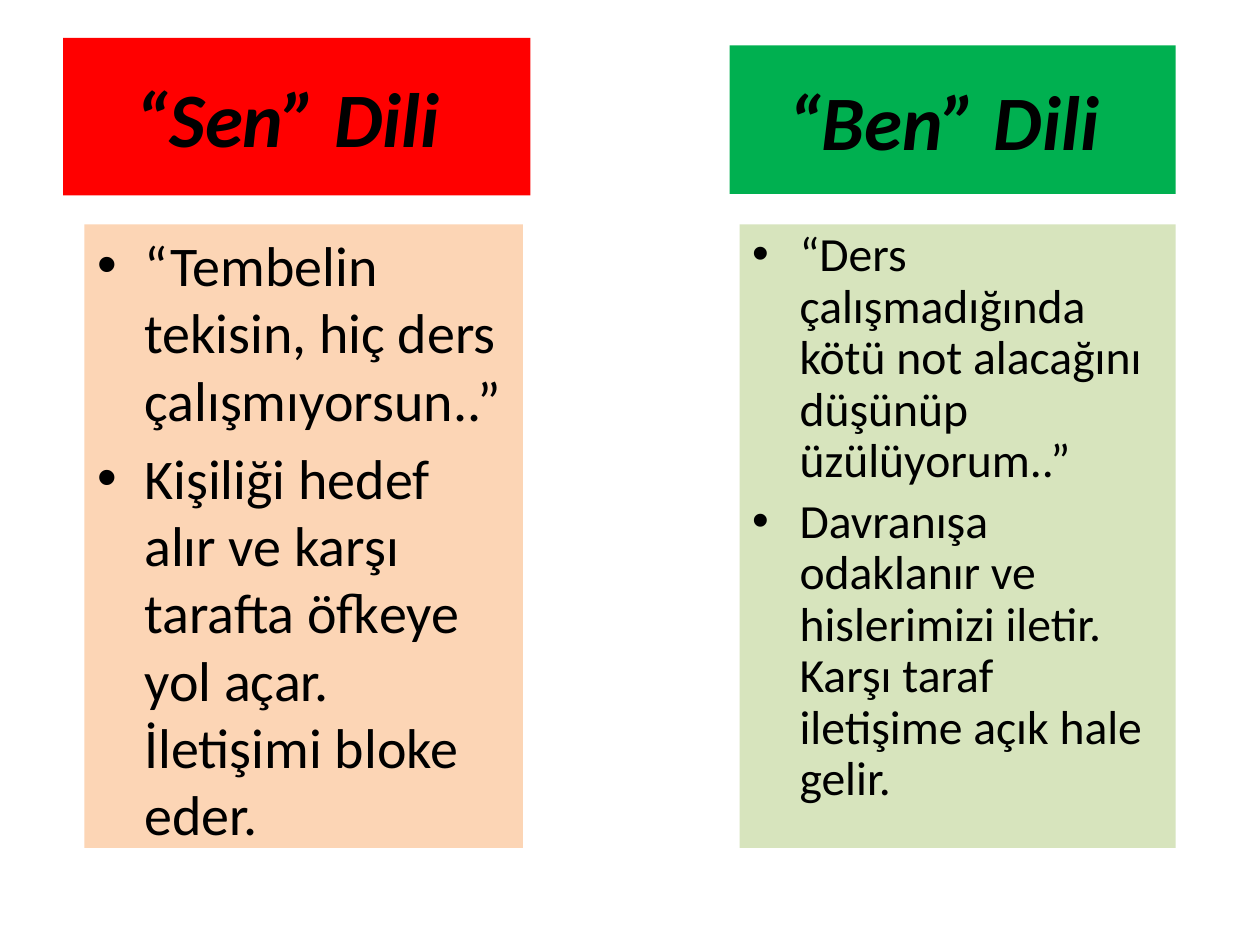
from pptx import Presentation
from pptx.dml.color import RGBColor
from pptx.enum import text
from pptx.util import Inches, Pt


def paint(color_format, value):
    color_format.rgb = RGBColor.from_string(value)


def fill_box(box, place, color, lines, font, line_spacing=None, align=None):
    """Place a text box, colour it and write one paragraph per line."""
    box.left, box.top, box.width, box.height = [Inches(n) for n in place]
    box.fill.solid()
    paint(box.fill.fore_color, color)
    frame = box.text_frame
    frame.word_wrap = True
    frame.auto_size = text.MSO_AUTO_SIZE.NONE
    frame.text = "\n".join(lines)
    for para in frame.paragraphs:
        para.line_spacing = line_spacing
        para.alignment = align
        for span in para.runs:
            paint(span.font.color, "000000")
            for name, value in font.items():
                setattr(span.font, name, value)


deck = Presentation()
deck.slide_width, deck.slide_height = Inches(10), Inches(7.5)
page = deck.slides.add_slide(deck.slide_layouts.get_by_name("Two Content"))
you_title, you_list, me_list = list(page.placeholders)[:3]
me_title = page.shapes.add_textbox(0, 0, Inches(1), Inches(1))

heading_font = {"name": "Calibri", "size": Pt(44), "bold": True, "italic": True}
headings = [
    (you_title, (0.5, 0.3, 3.71, 1.25), "FF0000", "“Sen” Dili "),
    (me_title, (5.79, 0.36, 3.54, 1.18), "00B050", "“Ben” Dili "),
]
for box, place, color, words in headings:
    fill_box(box, place, color, [words], heading_font, align=text.PP_ALIGN.CENTER)
    box.text_frame.vertical_anchor = text.MSO_ANCHOR.MIDDLE

lists = [
    (you_list, (0.67, 1.78, 3.48, 4.95), "FCD5B5", 32, None, [
        "“Tembelin tekisin, hiç ders çalışmıyorsun..”",
        "Kişiliği hedef alır ve karşı tarafta öfkeye yol açar. İletişimi bloke eder.",
    ]),
    (me_list, (5.87, 1.78, 3.46, 4.95), "D7E4BD", 27.2, 0.9, [
        "“Ders çalışmadığında kötü not alacağını düşünüp üzülüyorum..”",
        "Davranışa odaklanır ve hislerimizi iletir. Karşı taraf iletişime açık hale gelir.",
    ]),
]
for box, place, color, size, spacing, lines in lists:
    fill_box(box, place, color, lines, {"name": "Calibri", "size": Pt(size)}, spacing)

deck.save("out.pptx")
